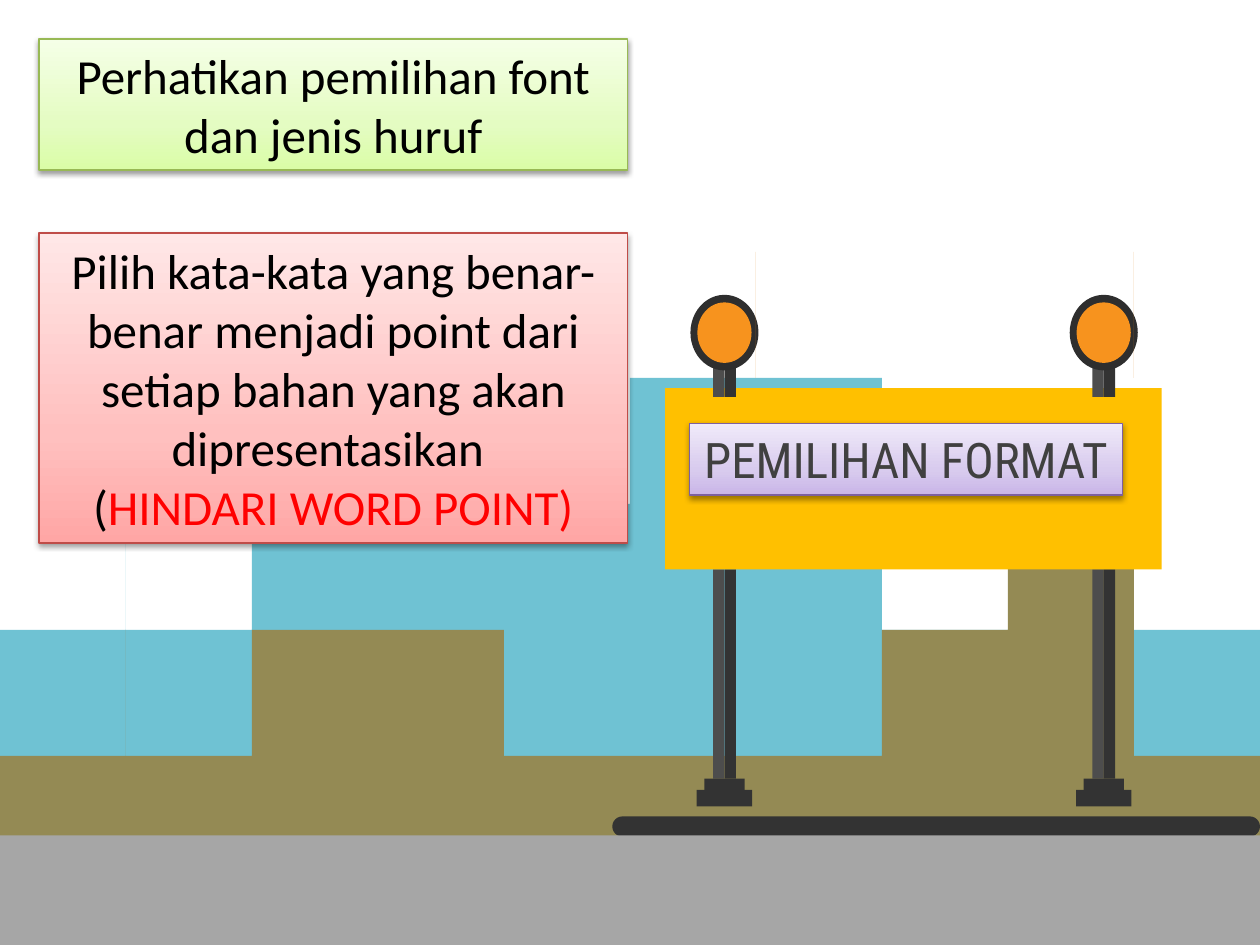
import math

import pptx
import pptx.dml.color
import pptx.enum.shapes
import pptx.enum.text
import pptx.oxml
import pptx.oxml.ns
import pptx.util

Inches = pptx.util.Inches
SHAPE = pptx.enum.shapes.MSO_SHAPE

COLORS = {
    "sky_blue": "6FC2D3", "olive": "948A54", "dark": "333333", "post": "4D4D4D",
    "board": "FFC000", "lamp": "F7931E", "lamp_shade": "DF851B", "ring": "2E2E2E",
    "ground": "A6A6A6", "black": "000000", "grey": "404040", "red": "FF0000",
}

# Text boxes: paragraphs are lists of (text, colour) runs
TITLE = {
    "box": (5.47, 3.36, 3.44, 0.57), "font": "Roboto Condensed", "line": "7D60A0",
    "stops": ("C9B5E8", "D8CBEE", "F0EAF9"), "wrap": False,
    "paragraphs": [[("PEMILIHAN FORMAT", "grey")]],
}
NOTES = [
    {"box": (0.31, 0.31, 4.67, 1.04), "font": "Calibri", "line": "98B955",
     "stops": ("DAFDA7", "E4FCC2", "F5FFE7"),
     "paragraphs": [[("Perhatikan pemilihan font dan jenis huruf", "black")]]},
    {"box": (0.31, 1.85, 4.67, 2.46), "font": "Calibri", "line": "BF4C48",
     "stops": ("FFA6A5", "FFC0BF", "FFE7E7"),
     "paragraphs": [
         [("Pilih kata-kata yang benar-benar menjadi point dari setiap bahan "
           "yang akan dipresentasikan ", "black")],
         [("(", "black"), ("HINDARI WORD POINT)", "red")]]},
]

# Skylines: (left, top) of each building, from left to right
SKYLINES = [
    {"color": "sky_blue", "right": 10.12, "bottom": 6.14, "steps": [
        (-0.03, 5.52), (0.13, 5), (0.4, 5.43), (0.56, 4.34), (1.21, 5.34), (1.27, 5.23),
        (1.45, 5.11), (1.82, 5.23), (1.96, 5.32), (2.15, 4.62), (2.43, 4.42), (2.93, 5.51),
        (2.98, 5.23), (3.31, 5), (3.49, 3.54), (5.14, 3.84), (5.22, 3.18), (5.34, 2.81),
        (5.58, 3.11), (6.91, 5.46), (6.98, 5.68), (7.09, 4.93), (7.31, 5.51), (7.41, 5),
        (7.97, 5.39), (8.18, 5.14), (9.25, 5.39), (9.65, 5.6), (9.77, 5.71)]},
    {"color": "olive", "right": 10.21, "bottom": 6.7, "steps": [
        (0, 5.86), (0.17, 6.15), (0.7, 5.39), (1.04, 5.65), (1.27, 5.76), (1.41, 5.65),
        (1.5, 5.57), (1.64, 5.68), (1.71, 6.13), (1.92, 5.68), (2.13, 5.28), (2.19, 4.94),
        (2.31, 4.67), (2.43, 4.95), (2.66, 5.04), (2.77, 5.46), (2.86, 5.72), (2.97, 5.88),
        (3.08, 5.14), (3.15, 4.75), (3.21, 5.05), (3.29, 5.22), (3.51, 5.06), (3.73, 5.28),
        (3.87, 5.68), (3.99, 4.75), (4.44, 4.99), (4.49, 5.53), (4.78, 5.62), (4.97, 5.94),
        (5.82, 6.16), (6.14, 5.73), (6.22, 5.62), (6.45, 5.71), (6.57, 5.92), (6.86, 6.01),
        (7.06, 6.29), (7.2, 6.17), (7.29, 5.9), (7.48, 4.85), (7.92, 5.54), (8.01, 6.3),
        (8.19, 4.93), (8.27, 4.11), (8.64, 4.61), (8.77, 6.29), (8.9, 4.85), (9.06, 4.74),
        (9.2, 4.85), (9.33, 4.68), (9.47, 5.7), (9.57, 6.07), (9.87, 6.32)]},
]
POST_CENTERS = (5.75, 8.76)
LAMP_Y = 2.64

prs = pptx.Presentation()
prs.slide_width, prs.slide_height = Inches(10), Inches(7.5)
s = prs.slides.add_slide(prs.slide_layouts[5])


def rgb(value):
    return pptx.dml.color.RGBColor.from_string(COLORS.get(value, value))


def paint(sp, color):
    sp.shadow.inherit = False
    sp.fill.solid()
    sp.fill.fore_color.rgb = rgb(color)
    sp.line.fill.background()
    return sp


def add_part(color, left, top, width, height, kind=SHAPE.RECTANGLE):
    return paint(s.shapes.add_shape(kind, *map(Inches, (left, top, width, height))), color)


def add_outline(color, points):
    builder = s.shapes.build_freeform(*points[0], scale=Inches(1))
    builder.add_line_segments(points[1:], close=True)
    return paint(builder.convert_to_shape(), color)


def add_skyline(color, steps, right, bottom):
    points = [(steps[0][0], bottom)]
    ends = [x for x, _ in steps[1:]] + [right]
    for (left, top), end in zip(steps, ends):
        points += [(left, top), (end, top)]
    add_outline(color, points + [(right, bottom)])


def add_post(center, top, height):
    add_part("post", center - 0.09, top, 0.09, height)
    add_part("dark", center, top, 0.09, height)


def add_lamp(center):
    for color, w, h in (("ring", 0.54, 0.6), ("lamp", 0.43, 0.48)):
        add_part(color, center - w / 2, LAMP_Y - h / 2, w, h, SHAPE.OVAL)
    angles = [math.radians(a) for a in range(-90, 91, 6)]
    add_outline("lamp_shade", [(center + 0.215 * math.cos(a), LAMP_Y + 0.24 * math.sin(a))
                               for a in angles])


def write(tf, paragraphs, font, size=28, wrap=True):
    tf.word_wrap = wrap
    tf.auto_size = pptx.enum.text.MSO_AUTO_SIZE.NONE
    tf.vertical_anchor = pptx.enum.text.MSO_ANCHOR.MIDDLE
    for i, runs in enumerate(paragraphs):
        p = tf.add_paragraph() if i else tf.paragraphs[0]
        p.alignment = pptx.enum.text.PP_ALIGN.CENTER
        for text, color in runs:
            r = p.add_run()
            r.text = text
            r.font.name, r.font.size = font, pptx.util.Pt(size)
            r.font.color.rgb = rgb(color)


def format_panel(sp, box, stops, line, paragraphs, font, wrap=True):
    sp.left, sp.top, sp.width, sp.height = map(Inches, box)
    paint(sp, stops[0])
    sp.line.color.rgb = rgb(line)
    sp.line.width = pptx.util.Pt(0.75)
    # Three-stop gradient and soft shadow
    ns = pptx.oxml.ns.nsdecls("a")
    qn = pptx.oxml.ns.qn
    gs = "".join(f'<a:gs pos="{pos}"><a:srgbClr val="{c}"/></a:gs>'
                 for pos, c in zip((0, 35000, 100000), stops))
    props = sp.element.spPr
    props.replace(props.find(qn("a:solidFill")), pptx.oxml.parse_xml(
        f'<a:gradFill {ns} rotWithShape="1"><a:gsLst>{gs}</a:gsLst>'
        '<a:lin ang="16200000" scaled="1"/></a:gradFill>'))
    props.find(qn("a:effectLst")).append(pptx.oxml.parse_xml(
        f'<a:outerShdw {ns} blurRad="40000" dist="20000" dir="5400000" rotWithShape="0">'
        '<a:srgbClr val="000000"><a:alpha val="38000"/></a:srgbClr></a:outerShdw>'))
    write(sp.text_frame, paragraphs, font, wrap=wrap)


# City and road
for skyline in SKYLINES:
    add_skyline(**skyline)
road = add_part("dark", 4.86, 6.48, 5.14, 0.16, SHAPE.ROUNDED_RECTANGLE)
road.adjustments[0] = 0.5

# Sign: lower posts with feet, board, upper posts with lamps
for center in POST_CENTERS:
    add_post(center, 4.52, 1.66)
    add_part("dark", center - 0.16, 6.18, 0.32, 0.1)
    add_part("dark", center - 0.22, 6.27, 0.44, 0.13)
add_part("board", 5.28, 3.08, 3.94, 1.44)
for center in POST_CENTERS:
    add_post(center, 2.72, 0.43)
    add_lamp(center)
add_part("ground", 0, 6.63, 10, 0.87)

# Title on the sign, brought in front of the board, then the two notes
title = s.shapes.title
s.shapes.element.append(title.element)
format_panel(title, **TITLE)
for note in NOTES:
    format_panel(add_part("board", *note["box"]), **note)

prs.save("out.pptx")
